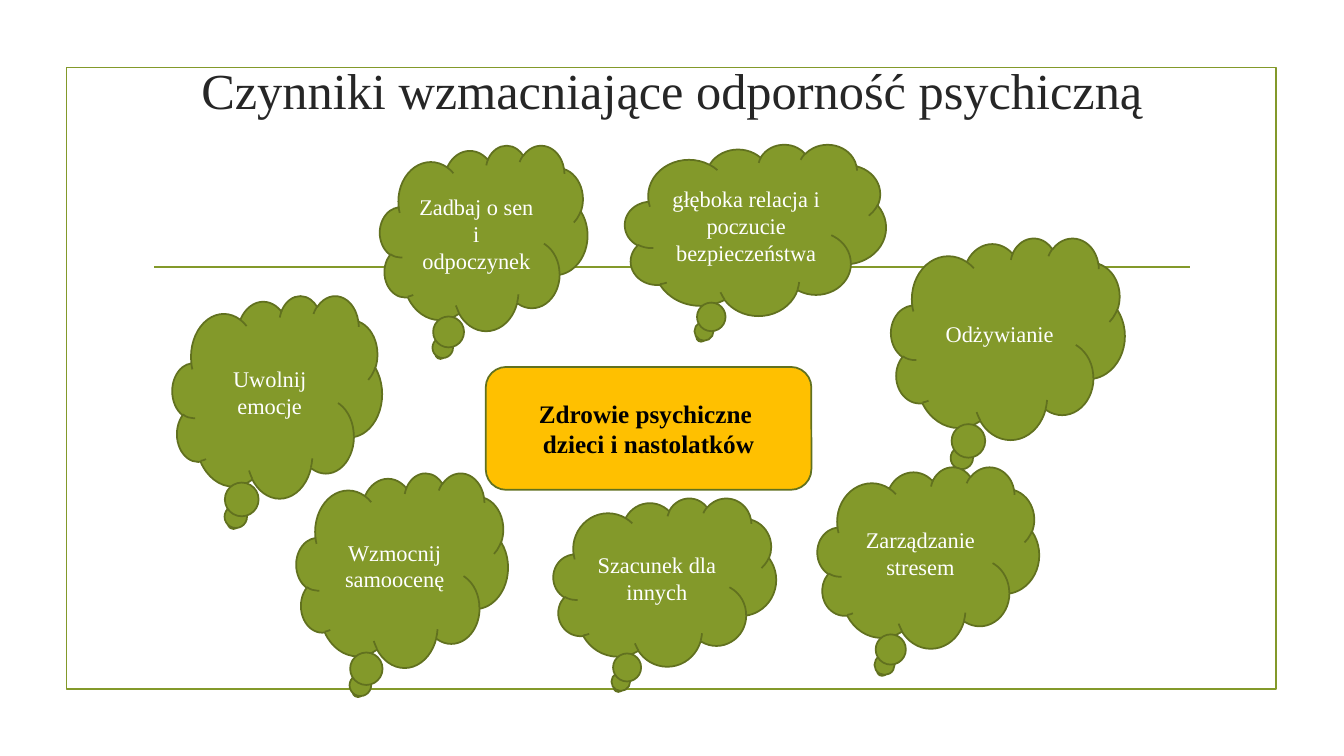
from dataclasses import dataclass

from lxml.etree import SubElement
from pptx import Presentation
from pptx.dml.color import RGBColor
from pptx.enum.shapes import MSO_CONNECTOR, MSO_SHAPE
from pptx.enum.text import MSO_ANCHOR, PP_ALIGN
from pptx.oxml.ns import qn
from pptx.util import Pt


@dataclass(frozen=True)
class Theme:
    font: str = "Times New Roman"
    olive: str = "83992A"
    dark_olive: str = "61711F"
    amber: str = "FFC000"
    title_ink: str = "262626"
    black: str = "000000"
    white: str = "FFFFFF"
    title_size: float = 36
    center_size: float = 18
    cloud_size: float = 16
    line_width: float = 1.25


THEME = Theme()

# Factors around the center: text, then left, top, width, height in points
FACTORS = [
    ("Szacunek dla innych", (395.3, 355.7, 159.1, 120.2)),
    ("Uwolnij emocje", (123.1, 211, 149.8, 144.7)),
    ("głęboka relacja i poczucie bezpieczeństwa", (446.4, 103, 186.5, 122.4)),
    ("Odżywianie", (636.5, 169.9, 167, 144)),
    ("Wzmocnij\nsamoocenę", (211.7, 337.7, 151.2, 139)),
    ("Zadbaj o sen i odpoczynek", (271.4, 103.7, 148.3, 132.5)),
    ("Zarządzanie stresem", (583.9, 333.4, 158.4, 129.6)),
]


def points(values):
    return [Pt(value) for value in values]


def write_text(box, text, *, size, color, bold=False):
    """Write centred text, one paragraph for each line."""
    frame = box.text_frame
    frame.word_wrap = True
    frame.vertical_anchor = MSO_ANCHOR.MIDDLE
    for index, line in enumerate(text.split("\n")):
        para = frame.add_paragraph() if index else frame.paragraphs[0]
        para.alignment = PP_ALIGN.CENTER
        span = para.add_run()
        span.text = line
        span.font.name = THEME.font
        span.font.size = Pt(size)
        span.font.bold = bold
        span.font.color.rgb = RGBColor.from_string(color)


def style_line(line, color):
    line.color.rgb = RGBColor.from_string(color)
    line.width = Pt(THEME.line_width)


def add_box(page, kind, place, *, line, fill=None):
    box = page.shapes.add_shape(kind, *points(place))
    box.shadow.inherit = False
    style_line(box.line, line)
    if fill:
        box.fill.solid()
        box.fill.fore_color.rgb = RGBColor.from_string(fill)
    else:
        box.fill.background()
    return box


def add_rule(page, ends):
    rule = page.shapes.add_connector(MSO_CONNECTOR.STRAIGHT, *points(ends))
    style_line(rule.line, THEME.olive)
    SubElement(rule._element.spPr, qn("a:effectLst"))


def add_title(page, text, place):
    box = page.shapes.add_textbox(*points(place))
    write_text(box, text, size=THEME.title_size, color=THEME.title_ink)


def add_cloud(page, text, place):
    cloud = add_box(page, MSO_SHAPE.CLOUD_CALLOUT, place,
                    line=THEME.dark_olive, fill=THEME.olive)
    write_text(cloud, text, size=THEME.cloud_size, color=THEME.white)


def main():
    deck = Presentation()
    deck.slide_width, deck.slide_height = Pt(960), Pt(540)
    page = deck.slides.add_slide(deck.slide_layouts[6])

    # Frame, rule and title
    add_box(page, MSO_SHAPE.RECTANGLE, (47.5, 48.2, 864, 444.2), line=THEME.olive)
    add_rule(page, (110.2, 190.8, 850.3, 190.8))
    add_title(page, "Czynniki wzmacniające odporność psychiczną",
              (66.2, 28.8, 828, 70.6))

    # Central topic
    center = add_box(page, MSO_SHAPE.ROUNDED_RECTANGLE, (347, 262.1, 232.6, 87.8),
                     line=THEME.dark_olive, fill=THEME.amber)
    write_text(center, "Zdrowie psychiczne \ndzieci i nastolatków",
               size=THEME.center_size, color=THEME.black, bold=True)

    # Strengthening factors
    for text, place in FACTORS:
        add_cloud(page, text, place)

    deck.save("out.pptx")


if __name__ == "__main__":
    main()
